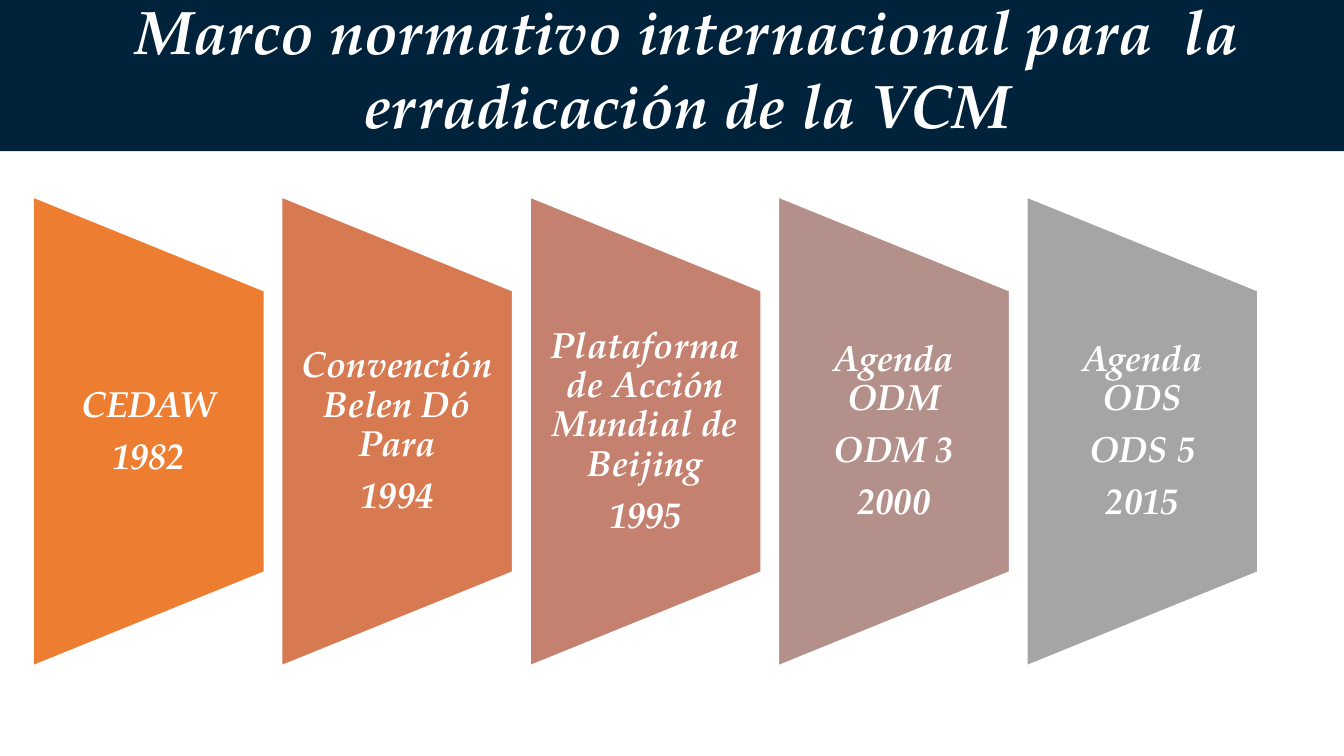
from pptx import Presentation
from pptx import util as u
from pptx.dml.color import RGBColor
from pptx.enum import shapes, text

FONT = "TeX Gyre Pagella"
WHITE = "FFFFFF"


def color(value):
    return RGBColor.from_string(value)


def write(box, lines, size, side_inset, spacing=1.0, after=0):
    frame = box.text_frame
    frame.text = "\n".join(lines)
    frame.word_wrap = True
    frame.vertical_anchor = text.MSO_ANCHOR.MIDDLE
    frame.margin_left = frame.margin_right = u.Cm(side_inset)
    frame.margin_top = frame.margin_bottom = 0
    for para in frame.paragraphs:
        para.alignment = text.PP_ALIGN.CENTER
        para.line_spacing = spacing
        para.space_after = u.Pt(after)
        for span in para.runs:
            span.font.name = FONT
            span.font.size = u.Pt(size)
            span.font.bold = span.font.italic = True
            span.font.color.rgb = color(WHITE)


deck = Presentation()
deck.slide_width, deck.slide_height = u.Cm(33.87), u.Cm(19.05)
page = deck.slides.add_slide(deck.slide_layouts[6])

# Timeline of agreements: one trapezoid and its label per step
STEPS = [
    ("ED7D31", ["CEDAW", "1982"]),
    ("D87A51", ["Convención Belen Dó Para", "1994"]),
    ("C48170", ["Plataforma de Acción Mundial de Beijing", "1995"]),
    ("B4908B", ["Agenda ODM", "ODM 3", "2000"]),
    ("A5A5A5", ["Agenda ODS", "ODS 5", "2015"]),
]
FIRST_CENTER, MIDDLE, PITCH = 3.75, 10.87, 6.26
STEP_WIDTH, STEP_HEIGHT, LABEL_HEIGHT = 5.82, 11.81, 7.09

timeline = page.shapes.add_group_shape()
for index, (fill, lines) in enumerate(STEPS):
    center = FIRST_CENTER + index * PITCH
    # The preset lies on its side, so its width is the step's height
    step = timeline.shapes.add_shape(
        shapes.MSO_SHAPE.FLOWCHART_MANUAL_OPERATION,
        u.Cm(center - STEP_HEIGHT / 2), u.Cm(MIDDLE - STEP_WIDTH / 2),
        u.Cm(STEP_HEIGHT), u.Cm(STEP_WIDTH))
    step.rotation = 270
    step.shadow.inherit = False
    step.fill.solid()
    step.fill.fore_color.rgb = color(fill)
    step.line.color.rgb = color(WHITE)
    step.line.width = u.Pt(1)

    label = timeline.shapes.add_textbox(
        u.Cm(center - STEP_WIDTH / 2), u.Cm(MIDDLE - LABEL_HEIGHT / 2),
        u.Cm(STEP_WIDTH), u.Cm(LABEL_HEIGHT))
    write(label, lines, 26, 0.46, spacing=0.9, after=9.1)

# Title band
band = page.shapes.add_shape(
    shapes.MSO_SHAPE.RECTANGLE, 0, u.Cm(-0.05), deck.slide_width, u.Cm(3.86))
band.shadow.inherit = False
band.fill.solid()
band.fill.fore_color.rgb = color("00223B")
band.line.fill.background()

title = page.shapes.add_textbox(u.Cm(1.6), u.Cm(0.66), u.Cm(31.47), u.Cm(2.06))
write(title, ["Marco normativo internacional para  la erradicación de la VCM"], 44, 0.25)

deck.save("out.pptx")
